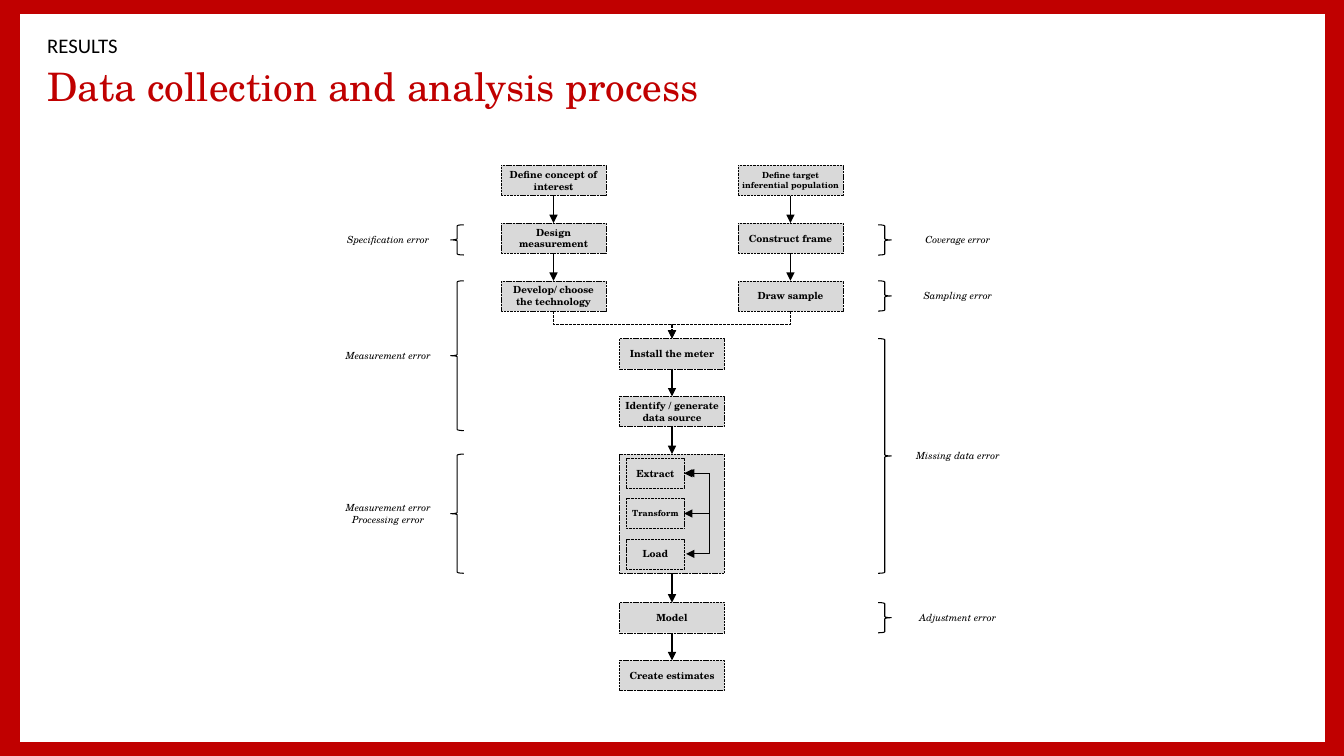
from lxml import etree
from pptx import Presentation
from pptx import util as u
from pptx.dml.color import RGBColor
from pptx.enum import dml, shapes, text
from pptx.oxml.ns import qn

COLORS = {"accent": "C00000", "paper": "FFFFFF", "box": "D9D9D9", "ink": "000000"}
SERIF, SANS = "TeX Gyre Schola", "Calibri"
SLIDE_W, SLIDE_H = 13.33, 7.5

# Flow grid, in inches: distance between columns and rows, and the size of a step
COLUMN, ROW = 1.175, 0.573
STEP_W, STEP_H = 1.04, 0.3
BLOCK_ROW, BLOCK_END = 5, 6.54
MODEL_ROW, ESTIMATES_ROW = 7.57, 8.57
BRACE_W = 0.13

STEPS = [  # column, row, label, size
    (0, 0, "Define concept of interest", 7),
    (2, 0, "Define target inferential population", 6),
    (0, 1, "Design measurement", 7),
    (2, 1, "Construct frame", 7),
    (0, 2, "Develop/ choose the technology", 7),
    (2, 2, "Draw sample", 7),
    (1, 3, "Install the meter", 7),
    (1, 4, "Identify / generate data source", 7),
    (1, MODEL_ROW, "Model", 7),
    (1, ESTIMATES_ROW, "Create estimates", 7),
]
ARROWS = [  # column, row above, row below
    (0, 0, 1), (0, 1, 2), (2, 0, 1), (2, 1, 2), (1, 3, 4), (1, 4, BLOCK_ROW),
    (1, BLOCK_END, MODEL_ROW), (1, MODEL_ROW, ESTIMATES_ROW),
]
SUBSTEPS = [("Extract", 7), ("Transform", 6), ("Load", 7)]
LEFT_ERRORS = [  # first row, last row, label lines
    (1.03, 1.03, ["Specification error"]),
    (2, 4.07, ["Measurement error"]),
    (BLOCK_ROW, BLOCK_END, ["Measurement error", "Processing error"]),
]
RIGHT_ERRORS = [
    (1.03, 1.03, ["Coverage error"]),
    (2, 2, ["Sampling error"]),
    (3, BLOCK_END, ["Missing data error"]),
    (MODEL_ROW, MODEL_ROW, ["Adjustment error"]),
]


def rgb(name):
    return RGBColor.from_string(COLORS[name])


def inches(*lengths):
    return [u.Inches(length) for length in lengths]


def write(shape, lines, font, color="ink", align=text.PP_ALIGN.CENTER, inset=0.04, spacing=1.0):
    frame = shape.text_frame
    layout = {"word_wrap": True, "vertical_anchor": text.MSO_ANCHOR.MIDDLE}
    layout |= {f"margin_{side}": u.Inches(inset) for side in ("left", "right")}
    layout |= {f"margin_{side}": u.Inches(0.04) for side in ("top", "bottom")}
    for key, value in layout.items():
        setattr(frame, key, value)
    for index, line in enumerate(lines):
        para = frame.add_paragraph() if index else frame.paragraphs[0]
        para.alignment, para.line_spacing = align, spacing
        span = para.add_run()
        span.text = line
        for key, value in font.items():
            setattr(span.font, key, value)
        span.font.color.rgb = rgb(color)


def add_panel(page, box, fill=None, kind=shapes.MSO_SHAPE.RECTANGLE, width=None, dash=None):
    panel = page.shapes.add_shape(kind, *inches(*box))
    panel.shadow.inherit = False
    if fill:
        panel.fill.solid()
        panel.fill.fore_color.rgb = rgb(fill)
    else:
        panel.fill.background()
    if width:
        panel.line.color.rgb = rgb("ink")
        panel.line.width = u.Pt(width)
        panel.line.dash_style = dash
    else:
        panel.line.fill.background()
    return panel


def add_step(page, box, label="", size=7):
    step = add_panel(page, box, "box", width=0.25, dash=dml.MSO_LINE.SQUARE_DOT)
    if label:
        write(step, [label], {"name": SERIF, "size": u.Pt(size), "bold": True})


def add_arrow(page, start, end, bend=None, turn=0, dash=None, ends=("tailEnd",)):
    """Draw an arrow; bend is the elbow's place as a share of its width, turn its rotation."""
    kind = shapes.MSO_CONNECTOR.STRAIGHT if bend is None else shapes.MSO_CONNECTOR.ELBOW
    arrow = page.shapes.add_connector(kind, *inches(*start, *end))
    arrow.line.color.rgb = rgb("ink")
    arrow.line.width = u.Pt(0.75)
    arrow.line.dash_style = dash
    properties = arrow._element.spPr
    for name in ends:
        etree.SubElement(properties.find(qn("a:ln")), qn(f"a:{name}"), type="triangle")
    etree.SubElement(properties, qn("a:effectLst"))
    if turn:
        properties.find(qn("a:xfrm")).set("rot", str(turn * 60000))
    if bend is not None:
        guides = properties.find(qn("a:prstGeom")).get_or_add_avLst()
        etree.SubElement(guides, qn("a:gd"), name="adj1", fmla=f"val {round(bend * 100000)}")


def draw_frame(page, box):
    left, top, width, height = box
    add_panel(page, box, "accent")
    add_panel(page, (left + 0.2, top + 0.14, width - 0.39, height - 0.28), "paper")


def draw_heading(page, box):
    left, top, width, height = box
    lines = [
        (0, 0.31, "RESULTS", SANS, 14.8, "ink", 0.8),
        (0.33, 0.47, "Data collection and analysis process", SERIF, 28, "accent", 0.9),
    ]
    for offset, line_height, label, name, size, color, spacing in lines:
        line = page.shapes.add_textbox(*inches(left, top + offset, width, line_height))
        write(line, [label], {"name": name, "size": u.Pt(size)}, color,
              text.PP_ALIGN.LEFT, 0.1, spacing)


def draw_merge(page, left, right, top, bottom):
    """Join both upper columns into the middle one with dashed elbows."""
    middle, centre_y = (left + right) / 2, (top + bottom) / 2
    half_w, half_h = (bottom - top) / 2, (middle - left) / 2
    for outer, side, turn in ((left, 1, 270), (right, -1, 90)):
        centre_x = (outer + middle) / 2
        add_arrow(page, (centre_x + side * half_w, centre_y - half_h),
                  (centre_x - side * half_w, centre_y + half_h),
                  0.5, turn, dml.MSO_LINE.SQUARE_DOT)


def draw_block(page, box):
    """Draw the extract, transform and load steps with their feedback arrows."""
    left, top, width, height = box
    add_step(page, box)
    pitch, substep_w = 0.4, 0.57
    for index, (label, size) in enumerate(SUBSTEPS):
        add_step(page, (left + 0.07, top + 0.04 + index * pitch, substep_w, STEP_H), label, size)
    edge = left + 0.07 + substep_w
    first, second, third = (top + 0.19 + index * pitch for index in range(3))
    for start, end in ((first, third), (second, first)):
        add_arrow(page, (edge, start), (edge + 0.02, end), 12.5, ends=("headEnd", "tailEnd"))


def draw_flow(page, box):
    left, top, width, height = box

    def centre(column):
        return left + column * COLUMN + STEP_W / 2

    for column, row, label, size in STEPS:
        add_step(page, (left + column * COLUMN, top + row * ROW, STEP_W, STEP_H), label, size)
    draw_block(page, (left + COLUMN, top + BLOCK_ROW * ROW, STEP_W,
                      (BLOCK_END - BLOCK_ROW) * ROW + STEP_H))
    for column, above, below in ARROWS:
        add_arrow(page, (centre(column), top + above * ROW + STEP_H),
                  (centre(column), top + below * ROW))
    draw_merge(page, centre(0), centre(2), top + 2 * ROW + STEP_H, top + 3 * ROW)


def draw_errors(page, box, errors, on_left):
    left, top, width, height = box
    far = left + width
    label_x, brace_x = (left, far - BRACE_W) if on_left else (far - STEP_W, left)
    for first, last, lines in errors:
        span_h = (last - first) * ROW + STEP_H
        span_top = top + first * ROW
        brace = add_panel(page, (brace_x, span_top, BRACE_W, span_h),
                          kind=shapes.MSO_SHAPE.LEFT_BRACE, width=0.75)
        brace.rotation = 0 if on_left else 180
        label_y = span_top + (span_h - STEP_H) / 2
        label = page.shapes.add_textbox(*inches(label_x, label_y, STEP_W, STEP_H))
        write(label, lines, {"name": SERIF, "size": u.Pt(7), "italic": True})


def main():
    deck = Presentation()
    deck.slide_width, deck.slide_height = inches(SLIDE_W, SLIDE_H)
    page = deck.slides.add_slide(deck.slide_layouts[6])
    draw_frame(page, (0, 0, SLIDE_W, SLIDE_H))
    draw_heading(page, (0.37, 0.32, 11.67, 0.8))
    draw_flow(page, (4.97, 1.64, 3.39, 5.21))
    draw_errors(page, (3.33, 1.64, 1.27, 5.21), LEFT_ERRORS, True)
    draw_errors(page, (8.71, 1.64, 1.31, 5.21), RIGHT_ERRORS, False)
    deck.save("out.pptx")


if __name__ == "__main__":
    main()
